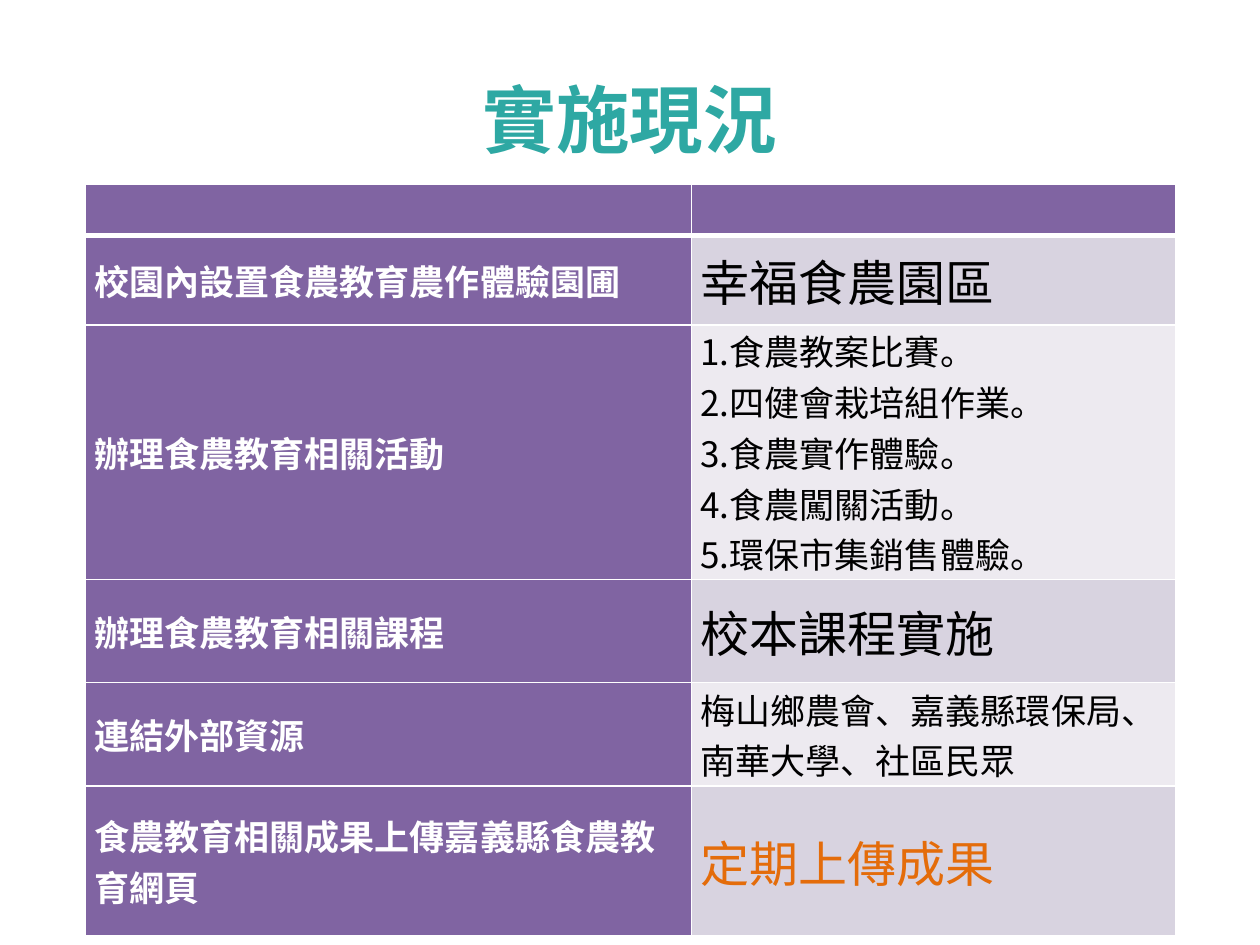
import pptx
import pptx.dml.color
import pptx.enum.text
import pptx.oxml.ns
import pptx.util
from lxml import etree

FONT = "Noto Sans CJK SC"
PURPLE, WHITE, BLACK = "8064A2", "FFFFFF", "000000"
TEAL, ORANGE = "2EA8A3", "E46C0A"
BANDS = ("D8D3E0", "EDEAF0")

COLUMN_WIDTHS = (4.81, 3.84)
HEADER_HEIGHT = 0.4
STATUS_ROWS = [
    (0.71, "校園內設置食農教育農作體驗園圃", "幸福食農園區", 28, BLACK),
    (2.02, "辦理食農教育相關活動",
     "1.食農教案比賽。\n2.四健會栽培組作業。\n3.食農實作體驗。\n"
     "4.食農闖關活動。\n5.環保市集銷售體驗。", 20, BLACK),
    (0.82, "辦理食農教育相關課程", "校本課程實施", 28, BLACK),
    (0.82, "連結外部資源", "梅山鄉農會、嘉義縣環保局、南華大學、社區民眾", 20, BLACK),
    (1.19, "食農教育相關成果上傳嘉義縣食農教育網頁", "定期上傳成果", 28, ORANGE),
]


def color(value):
    """Turn a hex string into a colour."""
    return pptx.dml.color.RGBColor.from_string(value)


def write(frame, text, size=20, ink=BLACK, bold=False, align=None):
    """Fill a text frame with one formatted paragraph per line."""
    frame.word_wrap = True
    frame.text = text
    for paragraph in frame.paragraphs:
        paragraph.alignment = align
        for run in paragraph.runs:
            run.font.size = pptx.util.Pt(size)
            run.font.bold = bold
            run.font.color.rgb = color(ink)
            run.font.name = FONT
            east_asian = etree.SubElement(
                run.font._element, pptx.oxml.ns.qn("a:ea"))
            east_asian.set("typeface", FONT)


def draw_borders(cell, bottom=1):
    """Give a cell white borders, with a chosen bottom width in points."""
    properties = cell._tc.get_or_add_tcPr()
    for side, width in (("L", 1), ("R", 1), ("T", 1), ("B", bottom)):
        line = etree.SubElement(properties, pptx.oxml.ns.qn("a:ln" + side))
        line.set("w", str(pptx.util.Pt(width)))
        fill = etree.SubElement(line, pptx.oxml.ns.qn("a:solidFill"))
        etree.SubElement(fill, pptx.oxml.ns.qn("a:srgbClr")).set("val", WHITE)


class SlideBuilder:
    """Hold the style and the current slide."""

    def __init__(self, presentation):
        """Add a title-only slide."""
        self.presentation = presentation
        self.slide = presentation.slides.add_slide(
            presentation.slide_layouts[5])

    def box(self, left, top, width, height):
        """Turn shares of the slide's size into lengths."""
        across = self.presentation.slide_width
        down = self.presentation.slide_height
        return (int(left * across), int(top * down),
                int(width * across), int(height * down))

    def title(self, text, *shares):
        """Move and format the title placeholder."""
        shape = self.slide.shapes.title
        shape.left, shape.top, shape.width, shape.height = self.box(*shares)
        shape.text_frame.vertical_anchor = pptx.enum.text.MSO_ANCHOR.MIDDLE
        write(shape.text_frame, text, size=42, ink=TEAL, bold=True,
              align=pptx.enum.text.PP_ALIGN.CENTER)

    def cell(self, cell, text, fill, **style):
        """Fill and write one body cell."""
        draw_borders(cell)
        self.paint(cell, fill)
        cell.vertical_anchor = pptx.enum.text.MSO_ANCHOR.MIDDLE
        cell.margin_left = cell.margin_right = pptx.util.Inches(0.07)
        cell.margin_top = cell.margin_bottom = 0
        write(cell.text_frame, text, **style)

    def paint(self, cell, fill):
        """Give a cell a solid fill."""
        cell.fill.solid()
        cell.fill.fore_color.rgb = color(fill)

    def status_table(self, rows, *shares):
        """Add the table of measures and their current status."""
        table = self.slide.shapes.add_table(
            len(rows) + 1, len(COLUMN_WIDTHS), *self.box(*shares)).table
        table.horz_banding = False
        for column, width in zip(table.columns, COLUMN_WIDTHS):
            column.width = pptx.util.Inches(width)
        table.rows[0].height = pptx.util.Inches(HEADER_HEIGHT)
        for cell in table.rows[0].cells:
            draw_borders(cell, bottom=3)
            self.paint(cell, PURPLE)
        for index, (height, measure, status, size, ink) in enumerate(rows):
            row = table.rows[index + 1]
            row.height = pptx.util.Inches(height)
            self.cell(row.cells[0], measure, PURPLE, ink=WHITE, bold=True)
            self.cell(row.cells[1], status, BANDS[index % 2],
                      size=size, ink=ink)


def main():
    """Build and save the slide."""
    presentation = pptx.Presentation()
    presentation.slide_width = pptx.util.Inches(10)
    presentation.slide_height = pptx.util.Inches(7.5)
    builder = SlideBuilder(presentation)
    builder.title("實施現況", 0.05, 0.04, 0.9, 0.17)
    builder.status_table(STATUS_ROWS, 0.068, 0.195, 0.865, 0.795)
    presentation.save("out.pptx")


if __name__ == "__main__":
    main()
